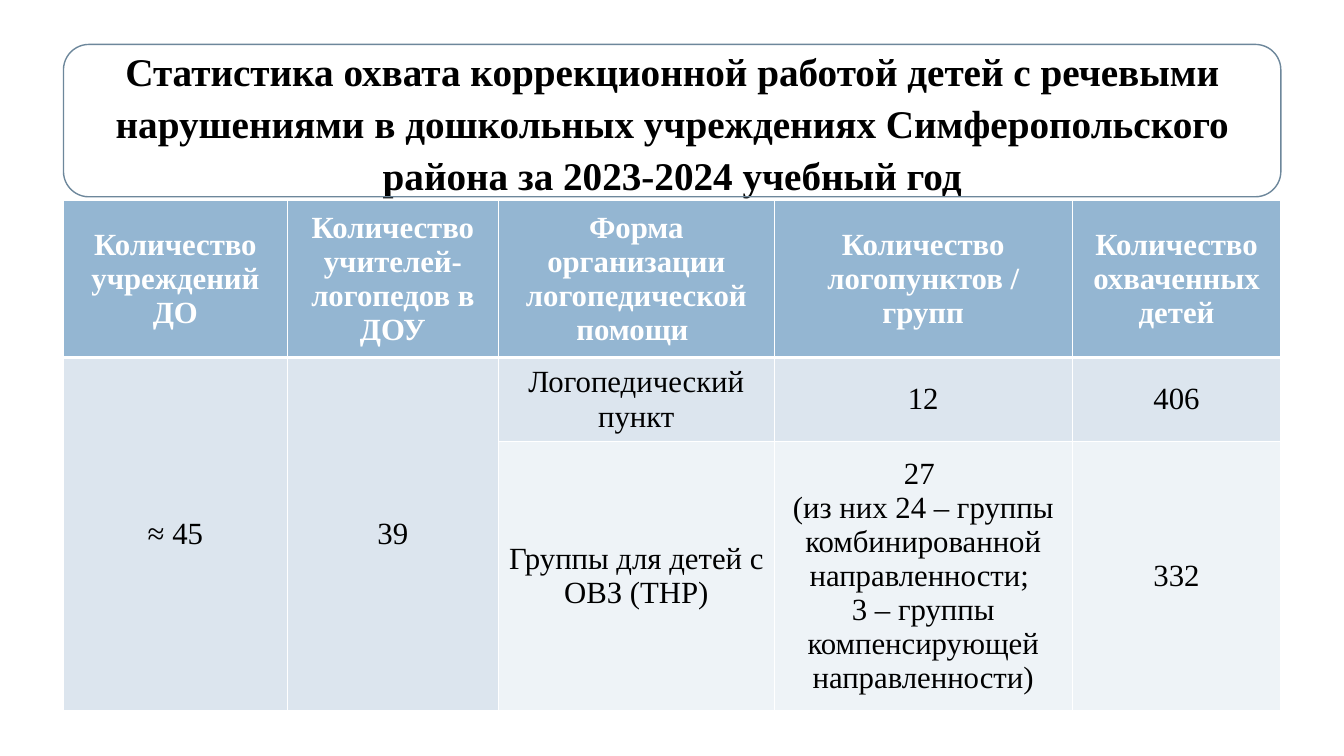
from dataclasses import dataclass

from lxml import etree
from pptx import Presentation
from pptx import util as u
from pptx.dml.color import RGBColor
from pptx.enum import shapes, text
from pptx.oxml import ns


@dataclass(frozen=True)
class Theme:
    font: str = "Times New Roman"
    title_size: int = 28
    table_size: int = 22
    white: str = "FFFFFF"
    black: str = "000000"
    frame: str = "6D879B"
    header: str = "94B6D2"
    bands: tuple = ("DCE5EE", "EEF3F7")


theme = Theme()


def add_run(paragraph, words, size, color, bold):
    paragraph.alignment = text.PP_ALIGN.CENTER
    run = paragraph.add_run()
    run.text = words
    run.font.name = theme.font
    run.font.size = u.Pt(size)
    run.font.bold = bold
    run.font.color.rgb = RGBColor.from_string(color)


def add_borders(cell, bottom_width):
    properties = cell._tc.get_or_add_tcPr()
    widths = {"a:lnL": 1, "a:lnR": 1, "a:lnT": 1, "a:lnB": bottom_width}
    for position, (tag, width) in enumerate(widths.items()):
        line = etree.Element(ns.qn(tag), w=str(u.Pt(width)))
        fill = etree.SubElement(line, ns.qn("a:solidFill"))
        etree.SubElement(fill, ns.qn("a:srgbClr"), val=theme.white)
        properties.insert(position, line)


presentation = Presentation()
presentation.slide_width = u.Cm(33.87)
presentation.slide_height = u.Cm(19.05)
slide = presentation.slides.add_slide(presentation.slide_layouts[5])

left, width = u.Cm(1.6), u.Cm(30.68)
title_top, title_height = u.Cm(1.12), u.Cm(3.84)

# Title
title = slide.shapes.title
title.left, title.top, title.width, title.height = left, title_top, width, title_height
title.fill.solid()
title.fill.fore_color.rgb = RGBColor.from_string(theme.white)
title.text_frame.word_wrap = True
title.text_frame.auto_size = text.MSO_AUTO_SIZE.NONE
title.text_frame.vertical_anchor = text.MSO_ANCHOR.MIDDLE
paragraph = title.text_frame.paragraphs[0]
paragraph.line_spacing = 1.1
add_run(
    paragraph,
    "Статистика охвата коррекционной работой детей с речевыми нарушениями "
    "в дошкольных учреждениях Симферопольского района за 2023-2024 учебный год",
    theme.title_size, theme.black, True,
)

# Rounded frame around the title
frame = slide.shapes.add_shape(
    shapes.MSO_SHAPE.ROUNDED_RECTANGLE, left, title_top, width, title_height)
frame.shadow.inherit = False
frame.fill.background()
frame.line.color.rgb = RGBColor.from_string(theme.frame)
frame.line.width = u.Pt(1)

# Table: each cell is a list of paragraphs, None continues the cell above
rows = [
    [["Количество учреждений ДО"], ["Количество учителей-логопедов в ДОУ"],
     ["Форма организации логопедической помощи "],
     ["Количество логопунктов / групп"], ["Количество охваченных детей"]],
    [["≈ 45"], ["39"], ["Логопедический пункт"], ["12"], ["406"]],
    [None, None, ["Группы для детей с ОВЗ (ТНР)"],
     ["27 ", "(из них 24 – группы комбинированной направленности; ",
      "3 – группы компенсирующей направленности)"], ["332"]],
]
column_widths = [5.64, 5.32, 6.95, 7.51, 5.26]
row_heights = [3.96, 2.12, 6.78]

table = slide.shapes.add_table(
    len(rows), len(column_widths), left, u.Cm(5.05), width, u.Cm(sum(row_heights))).table
for column, column_width in zip(table.columns, column_widths):
    column.width = u.Cm(column_width)
for row, row_height in zip(table.rows, row_heights):
    row.height = u.Cm(row_height)

for row_index, row in enumerate(rows):
    is_header = row_index == 0
    row_fill = theme.header if is_header else theme.bands[row_index - 1]
    for column_index, lines in enumerate(row):
        cell = table.cell(row_index, column_index)
        cell.fill.solid()
        cell.fill.fore_color.rgb = RGBColor.from_string(row_fill)
        add_borders(cell, 3 if is_header else 1)
        if lines is None:
            table.cell(row_index - 1, column_index).merge(cell)
            continue
        cell.vertical_anchor = text.MSO_ANCHOR.MIDDLE
        for line_index, words in enumerate(lines):
            frame_text = cell.text_frame
            paragraph = frame_text.add_paragraph() if line_index else frame_text.paragraphs[0]
            add_run(paragraph, words, theme.table_size,
                    theme.white if is_header else theme.black, is_header)

presentation.save("out.pptx")
